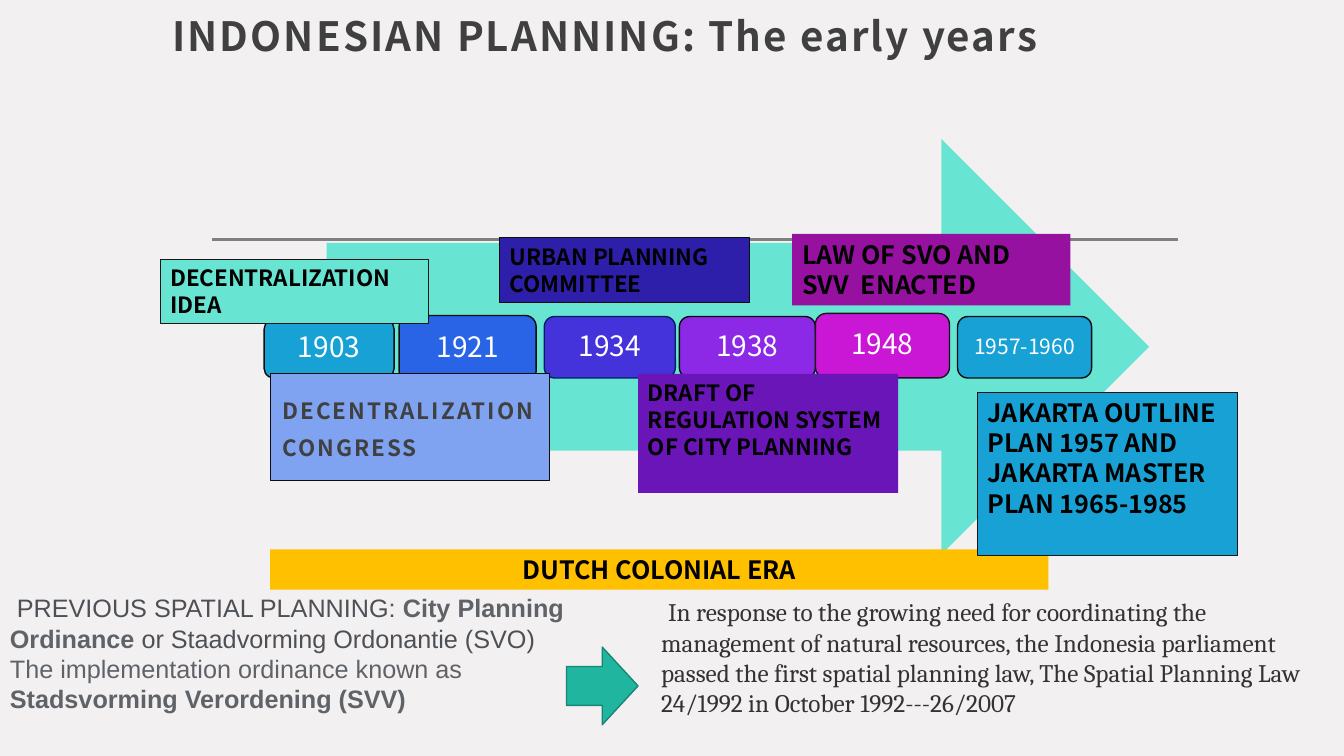
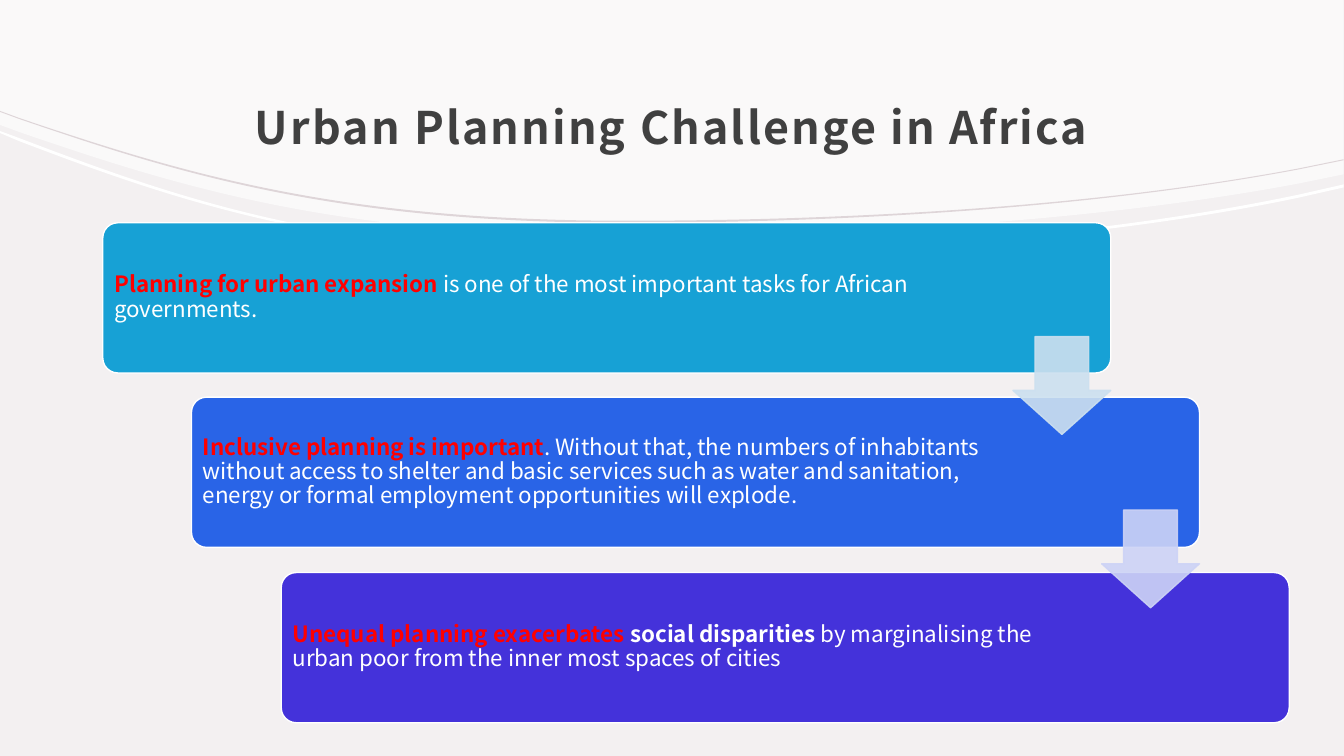
from pptx import Presentation
from pptx.dml.color import RGBColor
from pptx.enum.shapes import MSO_CONNECTOR, MSO_SHAPE
from pptx.enum.text import MSO_ANCHOR, MSO_AUTO_SIZE, PP_ALIGN
from pptx.oxml.ns import qn
from pptx.util import Pt
from lxml import etree

PX = 9144
FONT, SANS, SERIF = "Noto Sans CJK JP", "Arial", "Cambria"

PAPER = RGBColor(0xF3, 0xF0, 0xF1)
WHITE = RGBColor(0xFF, 0xFF, 0xFF)
BLACK = RGBColor(0, 0, 0)
DARK = RGBColor(0x40, 0x40, 0x40)
INK = RGBColor(0x0D, 0x0D, 0x0D)
BROWN = RGBColor(0x1B, 0x15, 0x17)
NAVY = RGBColor(0, 0x20, 0x60)
GRAY = RGBColor(0x80, 0x80, 0x80)
SLATE = RGBColor(0x4D, 0x51, 0x56)
STONE = RGBColor(0x5F, 0x63, 0x68)
COAL = RGBColor(0x33, 0x33, 0x33)
ROSE = RGBColor(0xDE, 0xD5, 0xD8)
RED = RGBColor(0xFF, 0, 0)
GOLD = RGBColor(0xFF, 0xC0, 0)
MINT = RGBColor(0x68, 0xE4, 0xD2)
TEAL = RGBColor(0x20, 0xB5, 0x9F)
PINE = RGBColor(0x18, 0x86, 0x76)
SKY = RGBColor(0x17, 0xA1, 0xD5)
BLUE = RGBColor(0x29, 0x64, 0xE7)
PALE = RGBColor(0x7F, 0xA2, 0xF1)
DEEP = RGBColor(0x2E, 0x1F, 0xAA)
INDIGO = RGBColor(0x44, 0x32, 0xDA)
GRAPE = RGBColor(0x69, 0x15, 0xB7)
VIOLET = RGBColor(0x8C, 0x29, 0xE7)
PLUM = RGBColor(0x97, 0x11, 0xA0)
PINK = RGBColor(0xC9, 0x17, 0xD5)
ICE = RGBColor(0xCC, 0xE0, 0xEF)
LILAC = RGBColor(0xCD, 0xD3, 0xF6)

RECT = MSO_SHAPE.RECTANGLE
ROUND = MSO_SHAPE.ROUNDED_RECTANGLE
RIGHT = MSO_SHAPE.RIGHT_ARROW
DOWN = MSO_SHAPE.DOWN_ARROW
LINE = MSO_CONNECTOR.STRAIGHT
TOP, MIDDLE, BOTTOM = MSO_ANCHOR.TOP, MSO_ANCHOR.MIDDLE, MSO_ANCHOR.BOTTOM
LEFT, CENTER = PP_ALIGN.LEFT, PP_ALIGN.CENTER
GROW = MSO_AUTO_SIZE.SHAPE_TO_FIT_TEXT

INSET = (10, 5, 10, 5)
WIDE = (12, 12, 12, 10)
CURVE_X = (0, 19, 179, 333, 620, 875, 1109, 1289, 1333)
BENDS = (2, 5)


def run(text, color=BLACK, size=16, bold=False, font=FONT, track=0):
    return text, color, size, bold, font, track


def write(shape, paras, align=LEFT, anchor=TOP, inset=INSET, lead=None,
          before=0, grow=False):
    frame = shape.text_frame
    frame.word_wrap = True
    frame.vertical_anchor = anchor
    if grow:
        frame.auto_size = GROW
    (frame.margin_left, frame.margin_top,
     frame.margin_right, frame.margin_bottom) = [n * PX for n in inset]
    for i, runs in enumerate(paras):
        para = frame.add_paragraph() if i else frame.paragraphs[0]
        para.alignment = align
        para.space_before = Pt(before)
        if lead:
            para.line_spacing = lead
        for text, color, size, bold, font, track in runs:
            part = para.add_run()
            part.text = text
            part.font.name = font
            part.font.size = Pt(size)
            part.font.bold = bold
            part.font.color.rgb = color
            if track:
                part.font._element.set("spc", str(track))


def fade(node, share):
    for color in node.iter(qn("a:srgbClr")):
        etree.SubElement(color, qn("a:alpha")).set("val", str(share * 1000))


def paint(shape, fill, edge=None, width=1, share=100):
    shape.shadow.inherit = False
    shape.fill.solid()
    shape.fill.fore_color.rgb = fill
    if edge is None:
        shape.line.fill.background()
    else:
        shape.line.color.rgb = edge
        shape.line.width = Pt(width)
    if share < 100:
        fade(shape._element.spPr, share)


def block(slide, kind, box, fill, edge=None, width=1, adjust=(), share=100):
    shape = slide.shapes.add_shape(kind, *[n * PX for n in box])
    for i, value in enumerate(adjust):
        shape.adjustments[i] = value
    paint(shape, fill, edge, width, share)
    return shape


def label(slide, box, paras, **style):
    shape = slide.shapes.add_textbox(*[n * PX for n in box])
    write(shape, paras, **style)


def title(slide, box, text, size, align, anchor):
    label(slide, box, [[run(text, DARK, size, True, track=150)]],
          align=align, anchor=anchor, inset=WIDE, lead=1.3)


def start(deck):
    slide = deck.slides.add_slide(deck.slide_layouts[6])
    slide.background.fill.solid()
    slide.background.fill.fore_color.rgb = PAPER
    return slide


def curve(heights):
    return list(zip(CURVE_X, heights))


def bend(shape, starts):
    path = next(shape._element.iter(qn("a:path")))
    steps = list(path)
    for i in starts:
        arc = etree.Element(qn("a:cubicBezTo"))
        path.replace(steps[i], arc)
        arc.append(steps[i][0])
        for step in steps[i + 1:i + 3]:
            arc.append(step[0])
            path.remove(step)


def band(slide, upper, lower, fill, share=100):
    points = upper + lower[::-1]
    pen = slide.shapes.build_freeform(*points[0], scale=float(PX))
    pen.add_line_segments(points[1:], close=True)
    shape = pen.convert_to_shape()
    starts = [len(upper) + i for i in BENDS]
    if len(upper) == len(CURVE_X):
        starts += BENDS
    bend(shape, starts)
    paint(shape, fill, share=share)


def years(slide, box):
    left, top, width, height = box
    block(slide, RIGHT, box, MINT)
    for text, x, y, w, h, fill, edge, size in (
            ("1903", -62, 179, 129, 58, SKY, INK, 20),
            ("1921", 72, 175, 136, 66, BLUE, INK, 20),
            ("1934", 216, 176, 130, 61, INDIGO, NAVY, 20),
            ("1938", 350, 176, 135, 61, VIOLET, INK, 20),
            ("1948", 485, 173, 133, 64, PINK, BROWN, 20),
            ("1957-1960", 626, 176, 133, 61, SKY, INK, 15)):
        tile = block(slide, ROUND, (left + x, top + y, w, h), fill, edge)
        write(tile, [[run(text, WHITE, size)]], CENTER, MIDDLE,
              (6, 6, 6, 6), 0.9)


def events(slide):
    for text, box, fill, edge, size in (
            ("DECENTRALIZATION IDEA", (159, 257, 266, 64), MINT, BROWN, 16),
            ("URBAN PLANNING COMMITTEE", (496, 236, 248, 64), DEEP, INK, 16),
            ("DRAFT OF REGULATION SYSTEM OF CITY PLANNING",
             (633, 371, 258, 118), GRAPE, None, 16),
            ("LAW OF SVO AND SVV  ENACTED",
             (786, 232, 276, 71), PLUM, None, 18),
            ("JAKARTA OUTLINE PLAN 1957 AND JAKARTA MASTER PLAN 1965-1985",
             (970, 389, 258, 162), SKY, BROWN, 18)):
        card = block(slide, RECT, box, fill, edge, 0.75)
        write(card, [[run(text, BLACK, size, True)]], grow=True)
    card = block(slide, RECT, (268, 371, 277, 106), PALE, INK, 0.75)
    write(card, [[run("DECENTRALIZATION CONGRESS", DARK, 16, True,
                      track=150)]],
          inset=WIDE, lead=1.4, before=9.3, grow=True)


def laws(slide, box):
    left, top, width, height = box
    label(slide, (left, top, 605, height), [
        [run(" PREVIOUS SPATIAL PLANNING: ", SLATE, 18, font=SANS),
         run("City Planning Ordinance", STONE, 18, True, SANS),
         run(" or Staadvorming Ordonantie (SVO)", SLATE, 18, font=SANS)],
        [run("The implementation ordinance known as ", STONE, 18, font=SANS),
         run("Stadsvorming Verordening (SVV)", STONE, 18, True, SANS)],
    ], grow=True)
    label(slide, (left + 646, top + 4, 667, height), [
        [run(" ", SLATE, 18, font=SANS),
         run("In response to the growing need for coordinating the "
             "management of natural resources, the Indonesia parliament "
             "passed the first spatial planning law, The Spatial Planning "
             "Law 24/1992 in October 1992---26/2007",
             COAL, 18, font=SERIF)],
    ], grow=True)
    block(slide, RIGHT, (left + 562, top + 59, 71, 77), TEAL, PINE)


def history(deck):
    slide = start(deck)
    rule = slide.shapes.add_connector(
        LINE, 210 * PX, 238 * PX, 1169 * PX, 238 * PX)
    rule.line.color.rgb = GRAY
    rule.line.width = Pt(2)
    etree.SubElement(rule._element.spPr, qn("a:effectLst"))
    years(slide, (324, 138, 816, 412))
    era = block(slide, RECT, (268, 545, 772, 40), GOLD)
    write(era, [[run("DUTCH COLONIAL ERA", BLACK, 18, True)]], CENTER,
          grow=True)
    title(slide, (159, 6, 1050, 63), "INDONESIAN PLANNING: The early years",
          28.8, LEFT, BOTTOM)
    events(slide)
    laws(slide, (0, 583, 1313, 131))


def waves(slide):
    band(slide, [(0, 0), (1333, 0)],
         curve((124, 131, 186, 234, 234, 234, 216, 182, 173)), WHITE, 60)
    band(slide, curve((130, 137, 198, 252, 252, 252, 231, 193, 183)),
         curve((132, 140, 201, 254, 254, 254, 234, 196, 186)), WHITE)
    band(slide, curve((110, 117, 171, 219, 219, 219, 201, 167, 158)),
         curve((111, 118, 173, 221, 221, 221, 202, 168, 159)), ROSE)


def stairs(slide, box):
    left, top, width, height = box
    across, down = 177, 347
    steps = (
        (SKY, 159, [run("Planning for urban expansion ", RED, 16, True),
                    run("is one of the most important tasks for African "
                        "governments.", WHITE)]),
        (BLUE, 192, [run("Inclusive planning is important", RED, 16, True),
                     run(". Without that, the numbers of inhabitants without "
                         "access to shelter and basic services such as water "
                         "and sanitation, energy or formal employment "
                         "opportunities will explode.", WHITE)]),
        (INDIGO, 192, [run("Unequal planning exacerbates ", RED, 16, True),
                       run("social disparities ", WHITE, 16, True),
                       run("by marginalising the urban poor from the inner "
                           "most spaces of cities", WHITE)]))
    for i, (fill, gap, runs) in enumerate(steps):
        spot = (left + i * across // 2, top + i * down // 2, width, height)
        step = block(slide, ROUND, spot, fill, WHITE, adjust=(0.1,))
        write(step, [runs], anchor=MIDDLE, inset=(7, 7, gap, 7), lead=0.9)
    for i, fill in enumerate((ICE, LILAC)):
        spot = (left + width - 97 + i * across // 2, top + 113 + i * 172,
                97, 97)
        block(slide, DOWN, spot, fill, fill, adjust=(0.55, 0.45), share=90)


def africa(deck):
    slide = start(deck)
    waves(slide)
    title(slide, (133, 60, 1067, 114), "Urban Planning Challenge in Africa",
          32, CENTER, MIDDLE)
    stairs(slide, (102, 221, 1000, 149))


def main():
    deck = Presentation()
    deck.slide_width, deck.slide_height = Pt(960), Pt(540)
    history(deck)
    africa(deck)
    deck.save("out.pptx")


if __name__ == "__main__":
    main()
